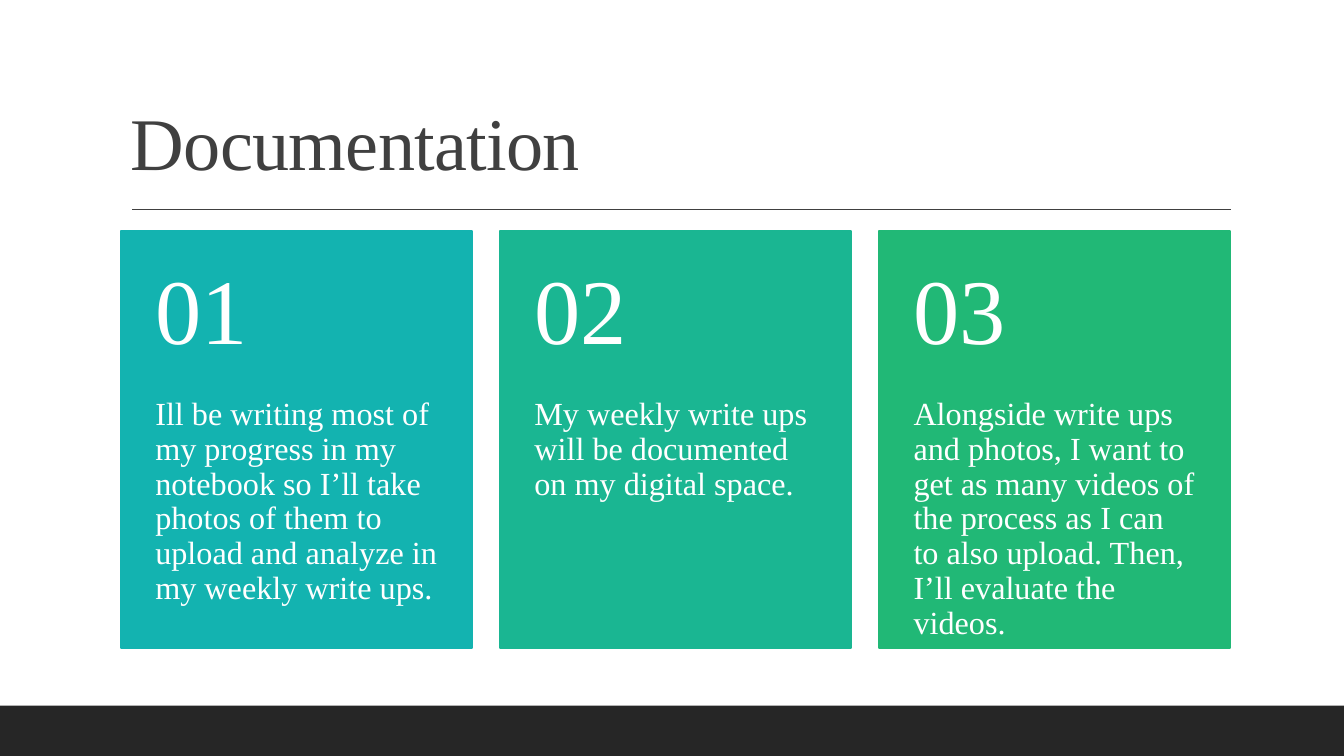
from pptx import Presentation
from pptx.dml.color import RGBColor
from pptx.enum.shapes import MSO_CONNECTOR as CONN, MSO_SHAPE as SHAPE
from pptx.enum.text import MSO_ANCHOR as ANCHOR
from pptx.oxml.ns import qn
from pptx.util import Inches, Pt
from lxml.etree import SubElement

WIDTH, HEIGHT = 13.33, 7.5
FONT = "Times New Roman"
COLORS = {
    "paper": "FFFFFF", "ink": "404040", "footer": "262626",
    "teal": "13B3B0", "sea": "1AB692", "green": "21B876",
}

# Card grid: three equal columns, each with a number row and a text row
LEFT, TOP = 1.2, 2.29
CARD_W, COL_STEP = 3.48, 3.76
CARD_H = 4.14
NUMBER_H = CARD_H * 0.4
INSET = 0.34

CARDS = [
    ("teal", "01", "Ill be writing most of my progress in my notebook so I’ll take "
                   "photos of them to upload and analyze in my weekly write ups."),
    ("sea", "02", "My weekly write ups will be documented on my digital space."),
    ("green", "03", "Alongside write ups and photos, I want to get as many videos of "
                    "the process as I can to also upload. Then, I’ll evaluate the videos."),
]


def rgb(name):
    return RGBColor.from_string(COLORS[name])


def add_box(s, x, y, w, h, color, outlined=False):
    sp = s.shapes.add_shape(SHAPE.RECTANGLE, Inches(x), Inches(y), Inches(w), Inches(h))
    sp.shadow.inherit = False
    sp.fill.solid()
    sp.fill.fore_color.rgb = rgb(color)
    if outlined:
        sp.line.color.rgb = rgb(color)
        sp.line.width = Pt(1.25)
    else:
        sp.line.fill.background()


def add_text(s, x, y, w, h, text, size, color, anchor, insets):
    """Add one paragraph; insets are left, top, right, bottom. Return its run."""
    tf = s.shapes.add_textbox(Inches(x), Inches(y), Inches(w), Inches(h)).text_frame
    tf.word_wrap = True
    tf.vertical_anchor = anchor
    tf.margin_left, tf.margin_top, tf.margin_right, tf.margin_bottom = map(Inches, insets)
    tf.text = text
    p = tf.paragraphs[0]
    p.line_spacing = 0.9
    r = p.runs[0]
    r.font.name, r.font.size = FONT, Pt(size)
    r.font.color.rgb = rgb(color)
    return r


def add_rule(s, x1, x2, y):
    line = s.shapes.add_connector(CONN.STRAIGHT, Inches(x1), Inches(y), Inches(x2), Inches(y))
    line.line.color.rgb = rgb("ink")
    line.line.width = Pt(1)
    SubElement(line._element.spPr, qn("a:effectLst"))


def add_card(s, col, color, number, text):
    x = LEFT + col * COL_STEP
    add_box(s, x, TOP, CARD_W, CARD_H, color, outlined=True)
    add_text(s, x, TOP + NUMBER_H, CARD_W, CARD_H - NUMBER_H, text, 23, "paper",
             ANCHOR.TOP, (INSET, 0, INSET, 0.36))
    add_text(s, x, TOP, CARD_W, NUMBER_H, number, 66, "paper",
             ANCHOR.MIDDLE, (INSET, 0.18, INSET, 0.18))


def main():
    prs = Presentation()
    prs.slide_width, prs.slide_height = Inches(WIDTH), Inches(HEIGHT)
    s = prs.slides.add_slide(prs.slide_layouts[6])
    s.background.fill.solid()
    s.background.fill.fore_color.rgb = rgb("paper")

    # Title with slightly tightened letters, and the rule below it
    r = add_text(s, LEFT, 0.31, 11, 1.59, "Documentation", 53, "ink",
                 ANCHOR.BOTTOM, (0.1, 0.05, 0.1, 0.05))
    r.font._element.set("spc", "-50")
    add_rule(s, 1.31, 12.21, 2.08)

    # Footer band
    add_box(s, 0, HEIGHT - 0.5, WIDTH, 0.5, "footer")

    # Numbered cards
    for col, card in enumerate(CARDS):
        add_card(s, col, *card)

    prs.save("out.pptx")


if __name__ == "__main__":
    main()
